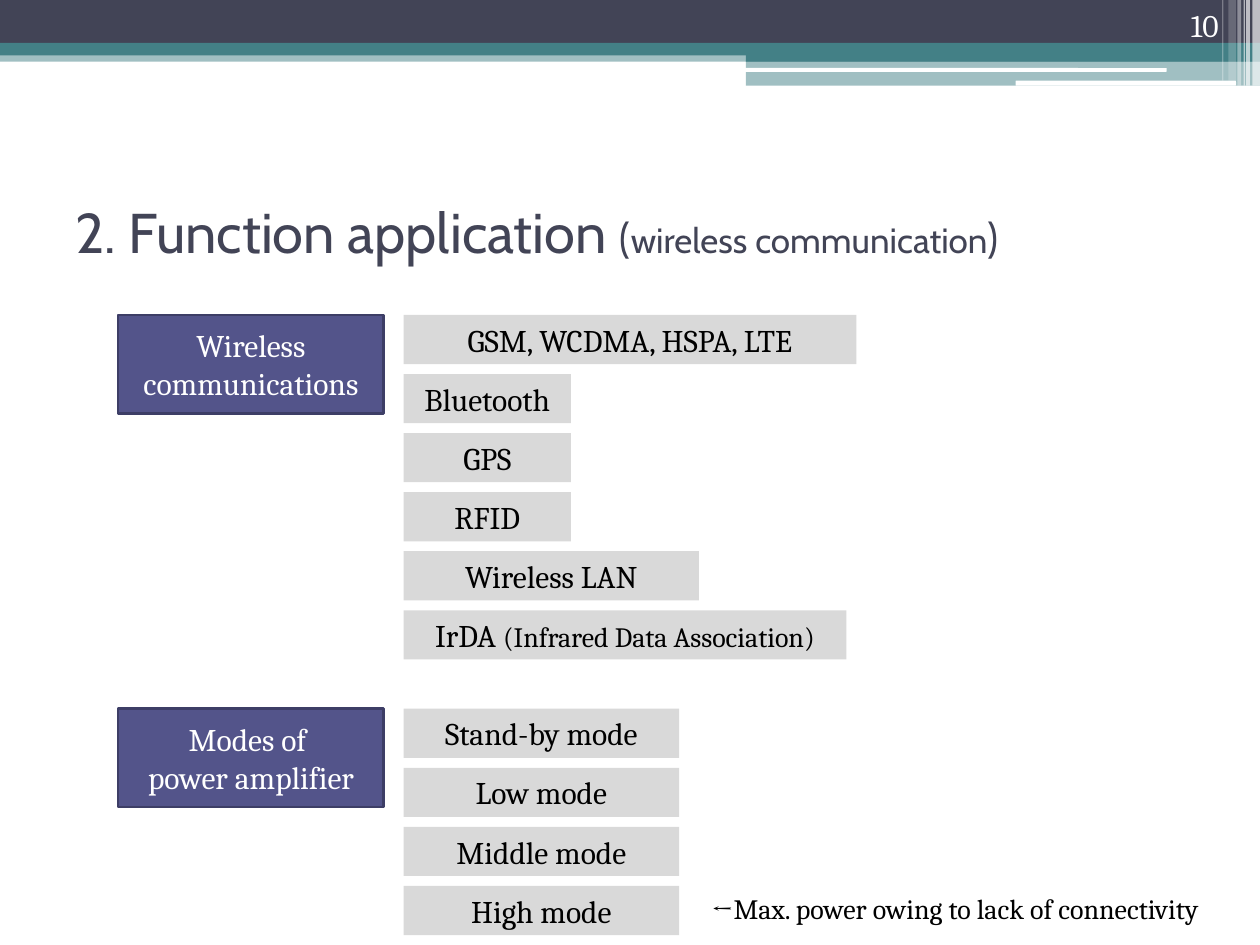
from typing import NamedTuple

from lxml.etree import SubElement
from pptx import Presentation
from pptx.dml.color import RGBColor
from pptx.enum.shapes import MSO_SHAPE as Shape
from pptx.enum.text import MSO_ANCHOR as Anchor, MSO_AUTO_SIZE as AutoSize, PP_ALIGN as Align
from pptx.oxml.ns import qn
from pptx.util import Inches, Pt

UNIT = 10 / 128  # grid module, in inches
ROW_HEIGHT, ROW_PITCH = 5, 6
HEADING_LEFT, HEADING_WIDTH, HEADING_HEIGHT = 12, 27, 10
ITEM_LEFT = 41
NAVY, TEAL, WHITE, BLACK = "424456", "438086", "FFFFFF", "000000"
INDIGO, INDIGO_DARK, GREY = "53548A", "3D3E66", "D9D9D9"


class Span(NamedTuple):
    text: str
    size: float = 18


class Item(NamedTuple):
    width: int
    spans: list[Span]


class Group(NamedTuple):
    top: int
    heading: list[str]
    items: list[Item]


class Band(NamedTuple):
    left: float
    top: float
    width: float
    height: float
    color: str
    opacity: int = 100
    shape: Shape = Shape.RECTANGLE


BANDS = [
    Band(0, 0.4, 10, 0.09, TEAL, 50),
    Band(0, 0, 10, 0.34, NAVY),
    Band(0, 0.34, 10, 0.1, TEAL),
    Band(5.92, 0.39, 4.08, 0.1, TEAL),
    Band(5.92, 0.48, 4.08, 0.2, TEAL, 50),
    Band(5.91, 0.54, 3.35, 0.03, WHITE, shape=Shape.ROUNDED_RECTANGLE),
    Band(8.06, 0.64, 1.75, 0.04, WHITE, shape=Shape.ROUNDED_RECTANGLE),
    *(Band(left, 0, width, height, WHITE, opacity)
      for left, width, height, opacity in [
          (9.94, 0.06, 0.68, 65), (9.89, 0.03, 0.68, 65), (9.87, 0.01, 0.68, 60),
          (9.82, 0.03, 0.68, 40), (9.75, 0.06, 0.64, 20), (9.7, 0.01, 0.64, 30)]),
]

GROUPS = [
    Group(32, ["Wireless communications"], [
        Item(46, [Span("GSM, WCDMA, HSPA, LTE")]),
        Item(17, [Span("Bluetooth")]),
        Item(17, [Span("GPS")]),
        Item(17, [Span("RFID")]),
        Item(30, [Span("Wireless LAN")]),
        Item(45, [Span("IrDA "), Span("(Infrared Data Association)", 16)]),
    ]),
    Group(72, ["Modes of ", "power amplifier"], [
        Item(28, [Span(f"{level} mode")])
        for level in ("Stand-by", "Low", "Middle", "High")
    ]),
]


def rgb(color: str) -> RGBColor:
    return RGBColor.from_string(color)


def write(box, paragraphs: list[list[Span]], *, color: str = BLACK, font: str = "Cambria",
          align: Align = Align.LEFT, anchor: Anchor = Anchor.MIDDLE) -> None:
    frame = box.text_frame
    frame.word_wrap = True
    frame.auto_size = AutoSize.NONE
    frame.vertical_anchor = anchor
    for index, spans in enumerate(paragraphs):
        para = frame.add_paragraph() if index else frame.paragraphs[0]
        para.alignment = align
        for span in spans:
            run = para.add_run()
            run.text = span.text
            run.font.name = font
            run.font.size = Pt(span.size)
            run.font.color.rgb = rgb(color)


def add_block(page, band: Band, line: str | None = None):
    box = page.shapes.add_shape(band.shape, *map(Inches, band[:4]))
    box.shadow.inherit = False
    box.fill.solid()
    box.fill.fore_color.rgb = rgb(band.color)
    if band.opacity < 100:
        color = box._element.spPr.find(f"{qn('a:solidFill')}/{qn('a:srgbClr')}")
        SubElement(color, qn("a:alpha")).set("val", str(band.opacity * 1000))
    if line:
        box.line.color.rgb = rgb(line)
        box.line.width = Pt(1.5)
    else:
        box.line.fill.background()
    return box


def on_grid(left: int, top: int, width: int, height: int, color: str) -> Band:
    return Band(left * UNIT, top * UNIT, width * UNIT, height * UNIT, color)


def add_group(page, group: Group) -> None:
    heading = add_block(page, on_grid(HEADING_LEFT, group.top, HEADING_WIDTH,
                                      HEADING_HEIGHT, INDIGO), INDIGO_DARK)
    write(heading, [[Span(text)] for text in group.heading], color=WHITE, align=Align.CENTER)
    for row, item in enumerate(group.items):
        top = group.top + row * ROW_PITCH
        box = add_block(page, on_grid(ITEM_LEFT, top, item.width, ROW_HEIGHT, GREY))
        write(box, [item.spans], align=Align.CENTER)


def add_label(page, left: float, top: float, width: float, height: float,
              span: Span, **text_format) -> None:
    box = page.shapes.add_textbox(*map(Inches, (left, top, width, height)))
    write(box, [[span]], **text_format)


def main() -> None:
    deck = Presentation()
    deck.slide_width, deck.slide_height = Inches(10), Inches(7.5)
    page = deck.slides.add_slide(deck.slide_layouts[5])
    for band in BANDS:
        add_block(page, band)

    title = page.shapes.title
    title.left, title.top, title.width, title.height = map(Inches, (0.5, 1.25, 9, 1.17))
    write(title, [[Span("2. Function application ", 32), Span("(", 24),
                   Span("wireless communication", 20), Span(")", 24)]],
          color=NAVY, font="Cabin")

    for group in GROUPS:
        add_group(page, group)
    add_label(page, 5.55, 7.03, 4.55, 0.37,
              Span("←Max. power owing to lack of connectivity", 16), anchor=Anchor.TOP)
    add_label(page, 8.94, 0, 0.83, 0.4, Span("10"),
              color=WHITE, align=Align.RIGHT, anchor=Anchor.BOTTOM)
    deck.save("out.pptx")


if __name__ == "__main__":
    main()
